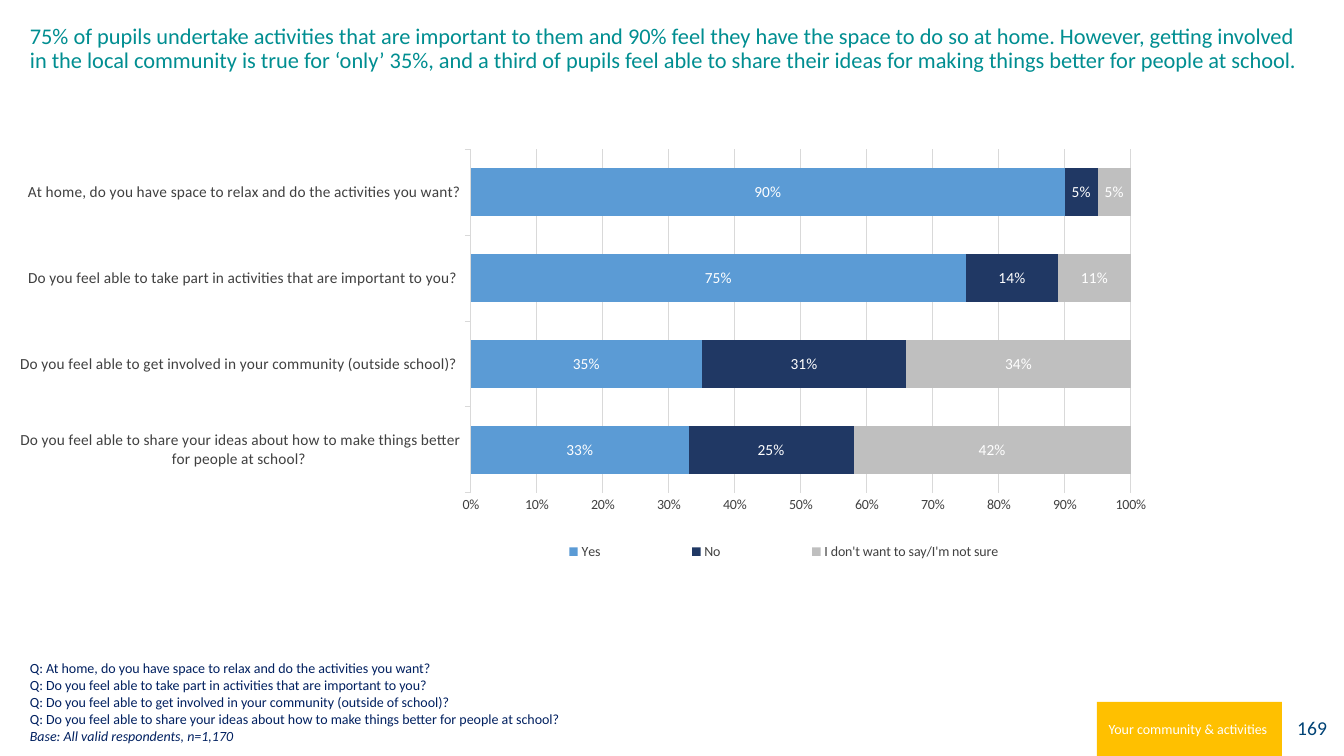
from lxml.etree import SubElement
from pptx import Presentation
from pptx.chart.data import CategoryChartData
from pptx.dml.color import RGBColor
from pptx.enum.chart import XL_CHART_TYPE as ChartType
from pptx.enum.chart import XL_LABEL_POSITION as LabelPosition
from pptx.enum.chart import XL_LEGEND_POSITION as LegendPosition
from pptx.enum.chart import XL_TICK_MARK as TickMark
from pptx.enum.shapes import MSO_SHAPE as Shape
from pptx.enum.text import MSO_ANCHOR as Anchor
from pptx.enum.text import PP_ALIGN as Align
from pptx.oxml.ns import qn
from pptx.util import Emu, Pt

TEAL = RGBColor(0x00, 0x8E, 0x91)
NAVY = RGBColor(0x00, 0x20, 0x60)
PAGE_BLUE = RGBColor(0x00, 0x43, 0x76)
AMBER = RGBColor(0xFF, 0xC0, 0x00)
WHITE = RGBColor(0xFF, 0xFF, 0xFF)
DARK_GREY = RGBColor(0x40, 0x40, 0x40)
LINE_GREY = RGBColor(0xD9, 0xD9, 0xD9)
YES_BLUE = RGBColor(0x5B, 0x9B, 0xD5)
NO_BLUE = RGBColor(0x20, 0x38, 0x64)
UNSURE_GREY = RGBColor(0xBF, 0xBF, 0xBF)

TITLE = (
    "75% of pupils undertake activities that are important to them and 90% feel "
    "they have the space to do so at home. However, getting involved in the local "
    "community is true for ‘only’ 35%, and a third of pupils feel able to share "
    "their ideas for making things better for people at school."
)
QUESTIONS = [
    "Q: At home, do you have space to relax and do the activities you want?",
    "Q: Do you feel able to take part in activities that are important to you?",
    "Q: Do you feel able to get involved in your community (outside of school)?",
    "Q: Do you feel able to share your ideas about how to make things better "
    "for people at school?",
]
BASE = "Base: All valid respondents, n=1,170"

# Categories run from the bottom bar to the top bar
CATEGORIES = [
    "Do you feel able to share your ideas about how to make things better "
    "for people at school? ",
    "Do you feel able to get involved in your community (outside school)? ",
    "Do you feel able to take part in activities that are important to you? ",
    "At home, do you have space to relax and do the activities you want?",
]
ANSWERS = [
    ("Yes", YES_BLUE, (0.33, 0.35, 0.75, 0.90)),
    ("No", NO_BLUE, (0.25, 0.31, 0.14, 0.05)),
    ("I don't want to say/I'm not sure", UNSURE_GREY, (0.42, 0.34, 0.11, 0.05)),
]


def px(length):
    return Emu(round(length * 914400 / 100.8))


class SlideBuilder:
    font_name = "Calibri"

    def __init__(self, deck):
        self.slide = deck.slides.add_slide(deck.slide_layouts[6])

    def style(self, font, size, color):
        font.name = self.font_name
        font.size = Pt(size)
        font.color.rgb = color

    def fill_text(self, shape, lines, size, color, align, anchor, spacing=None):
        """Each line is a pair: wording, italic."""
        frame = shape.text_frame
        frame.word_wrap = True
        frame.vertical_anchor = anchor
        for index, (wording, italic) in enumerate(lines):
            para = frame.add_paragraph() if index else frame.paragraphs[0]
            para.alignment = align
            if spacing:
                para.line_spacing = spacing
            span = para.add_run()
            span.text = wording
            self.style(span.font, size, color)
            if italic:
                span.font.italic = True

    def text(self, place, lines, size, color, anchor=Anchor.TOP, spacing=None):
        box = self.slide.shapes.add_textbox(*map(px, place))
        self.fill_text(box, lines, size, color, Align.LEFT, anchor, spacing)

    def block(self, place, fill, wording, size, color, align):
        block = self.slide.shapes.add_shape(Shape.RECTANGLE, *map(px, place))
        block.shadow.inherit = False
        block.fill.solid()
        block.fill.fore_color.rgb = fill
        block.line.fill.background()
        self.fill_text(block, [(wording, False)], size, color, align, Anchor.MIDDLE)

    def stacked_bars(self, place, categories, answers, plot_area, legend_area):
        data = CategoryChartData(number_format="0%")
        data.categories = categories
        for name, _, values in answers:
            data.add_series(name, values)
        chart = self.slide.shapes.add_chart(
            ChartType.BAR_STACKED_100, *map(px, place), data).chart
        chart.has_title = False
        self.style(chart.font, 10, DARK_GREY)

        # Bars and their labels
        plot = chart.plots[0]
        plot.gap_width = 80
        plot.overlap = 100
        plot.vary_by_categories = False
        for series, (_, color, _) in zip(plot.series, answers):
            series.format.fill.solid()
            series.format.fill.fore_color.rgb = color
            labels = series.data_labels
            labels.show_value = True
            labels.position = LabelPosition.CENTER
            labels.number_format = "0%"
            labels.number_format_is_linked = False
            self.style(labels.font, 11, WHITE)

        # Axes
        questions, shares = chart.category_axis, chart.value_axis
        self.style(questions.tick_labels.font, 11, DARK_GREY)
        self.style(shares.tick_labels.font, 10, DARK_GREY)
        questions.major_tick_mark = TickMark.OUTSIDE
        shares.major_tick_mark = TickMark.NONE
        shares.minimum_scale, shares.maximum_scale = 0, 1
        shares.major_unit = 0.1
        shares.tick_labels.number_format = "0%"
        shares.tick_labels.number_format_is_linked = False
        shares.format.line.fill.background()
        shares.has_major_gridlines = True
        for line in (questions.format.line, shares.major_gridlines.format.line):
            line.color.rgb = LINE_GREY
            line.width = Pt(0.75)

        # Legend and layout
        chart.has_legend = True
        legend = chart.legend
        legend.position = LegendPosition.BOTTOM
        legend.include_in_layout = False
        self.style(legend.font, 10, DARK_GREY)
        chart_xml = chart.plots[0]._element.getparent().getparent()
        plot_xml = chart_xml.find(qn("c:plotArea"))
        legend_xml = chart_xml.find(qn("c:legend"))
        self.arrange(plot_xml, 0, plot_area, inner=True)
        self.arrange(legend_xml, 1, legend_area)

    def arrange(self, part, index, area, inner=False):
        for old in part.findall(qn("c:layout")):
            part.remove(old)
        layout = SubElement(part, qn("c:layout"))
        part.insert(index, layout)
        manual = SubElement(layout, qn("c:manualLayout"))
        settings = [("layoutTarget", "inner")] if inner else []
        settings += [("xMode", "edge"), ("yMode", "edge")]
        settings += zip("xywh", area)
        for tag, value in settings:
            SubElement(manual, qn("c:" + tag)).set("val", str(value))


def main():
    deck = Presentation()
    deck.slide_width, deck.slide_height = px(1344), px(756)
    page = SlideBuilder(deck)

    # Page number
    page.block((1278, 701, 59, 54), WHITE, "169", 14, PAGE_BLUE, Align.RIGHT)

    # Headline
    page.text((20, 20, 1292, 99), [(TITLE, False)], 16, TEAL, spacing=0.9)

    # Questions and base
    notes = [(question, False) for question in QUESTIONS] + [(BASE, True)]
    page.text((20, 654, 1128, 95), notes, 10, NAVY, Anchor.BOTTOM)

    # Section tab
    page.block((1097, 702, 185, 54), AMBER, "Your community & activities ",
               10, WHITE, Align.CENTER)

    # Answers by question
    page.stacked_bars((20, 132, 1145, 435), CATEGORIES, ANSWERS,
                      plot_area=(0.39, 0.04, 0.58, 0.79),
                      legend_area=(0.4, 0.93, 0.53, 0.07))

    deck.save("out.pptx")


if __name__ == "__main__":
    main()
